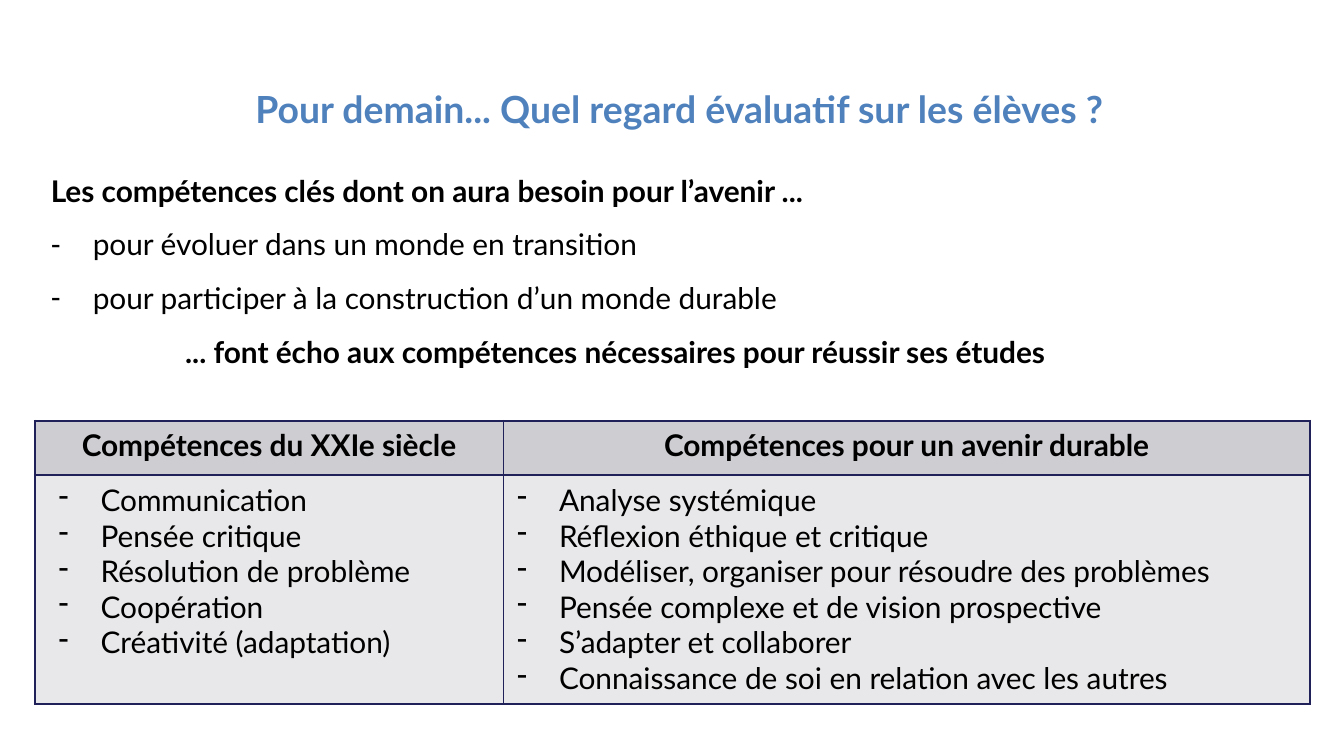
from lxml import etree
from pptx import Presentation
from pptx.dml.color import RGBColor
from pptx.enum.text import MSO_ANCHOR, MSO_AUTO_SIZE, PP_ALIGN
from pptx.oxml.ns import qn
from pptx.util import Pt

CENTER, LEFT = PP_ALIGN.CENTER, PP_ALIGN.LEFT
MIDDLE, TOP = MSO_ANCHOR.MIDDLE, MSO_ANCHOR.TOP
NO_FIT = MSO_AUTO_SIZE.NONE
FONT = "Lato"
COLORS = {
    "title": "4F81BD",
    "text": "000000",
    "border": "21215A",
    "header": "CDCDD2",
    "body": "E8E8EA",
}


def add_text(tf, i, text, size=16, bold=False, color="text", align=LEFT,
             margin=0, bullet=False, spacing=1.0):
    """Write paragraph i of a text frame; a bullet hangs 22.5 pt left of its text."""
    p = tf.paragraphs[0] if i == 0 else tf.add_paragraph()
    pPr = p._p.get_or_add_pPr()
    pPr.set("marL", str(Pt(margin)))
    pPr.set("indent", str(Pt(-22.5 if bullet else 0)))
    if bullet:
        etree.SubElement(pPr, qn("a:buChar")).set("char", "-")
    else:
        etree.SubElement(pPr, qn("a:buNone"))
    p.alignment = align
    p.line_spacing = spacing
    p.space_before = Pt(0)
    r = p.add_run()
    r.text = text
    r.font.name = FONT
    r.font.size = Pt(size)
    r.font.bold = bold
    r.font.color.rgb = RGBColor.from_string(COLORS[color])
    return p


def add_borders(cell):
    tcPr = cell._tc.get_or_add_tcPr()
    for side in ("lnL", "lnR", "lnT", "lnB"):
        ln = etree.SubElement(tcPr, qn(f"a:{side}"), w=str(Pt(1)))
        fill = etree.SubElement(ln, qn("a:solidFill"))
        etree.SubElement(fill, qn("a:srgbClr"), val=COLORS["border"])


prs = Presentation()
prs.slide_width, prs.slide_height = Pt(720), Pt(405)
s = prs.slides.add_slide(prs.slide_layouts[1])

# Title
title = s.shapes.title
title.left, title.top, title.width, title.height = Pt(31), Pt(26.6), Pt(657.4), Pt(51.1)
tf = title.text_frame
tf.auto_size = NO_FIT
tf.vertical_anchor = MIDDLE
p = add_text(tf, 0, "Pour demain... Quel regard évaluatif sur les élèves ?", size=20,
             bold=True, color="title", align=CENTER, margin=8.6, spacing=1.5)
p.space_after = Pt(6)

# Key skills
skills = s.placeholders[1]
skills.left, skills.top, skills.width, skills.height = Pt(20), Pt(79.2), Pt(689), Pt(123.8)
tf = skills.text_frame
tf.auto_size = NO_FIT
tf.vertical_anchor = TOP
lines = [
    ("Les compétences clés dont on aura besoin pour l’avenir ...", 0, False),
    ("pour évoluer dans un monde en transition", 22.5, True),
    ("pour participer à la construction d’un monde durable", 22.5, True),
    ("... font écho aux compétences nécessaires pour réussir ses études", 72, False),
]
for i, (text, margin, bullet) in enumerate(lines):
    add_text(tf, i, text, bold=not bullet, margin=margin, bullet=bullet, spacing=1.5)

# Comparison table: header, column width, list indent, items
columns = [
    ("Compétences du XXIe siècle", 251.2, 28.1, [
        "Communication",
        "Pensée critique",
        "Résolution de problème",
        "Coopération",
        "Créativité (adaptation)",
    ]),
    ("Compétences pour un avenir durable", 432, 22.5, [
        "Analyse systémique",
        "Réflexion éthique et critique",
        "Modéliser, organiser pour résoudre des problèmes",
        "Pensée complexe et de vision prospective",
        "S’adapter et collaborer",
        "Connaissance de soi en relation avec les autres",
    ]),
]
table = s.shapes.add_table(2, 2, Pt(18.6), Pt(225.4), Pt(683.2), Pt(151.7)).table
table.rows[0].height, table.rows[1].height = Pt(29.2), Pt(122.5)
for c, (header, width, margin, items) in enumerate(columns):
    table.columns[c].width = Pt(width)
    for row, fill in enumerate(("header", "body")):
        cell = table.cell(row, c)
        add_borders(cell)
        cell.fill.solid()
        cell.fill.fore_color.rgb = RGBColor.from_string(COLORS[fill])
    add_text(table.cell(0, c).text_frame, 0, header, bold=True, align=CENTER)
    for i, item in enumerate(items):
        add_text(table.cell(1, c).text_frame, i, item, margin=margin, bullet=True)

prs.save("out.pptx")
